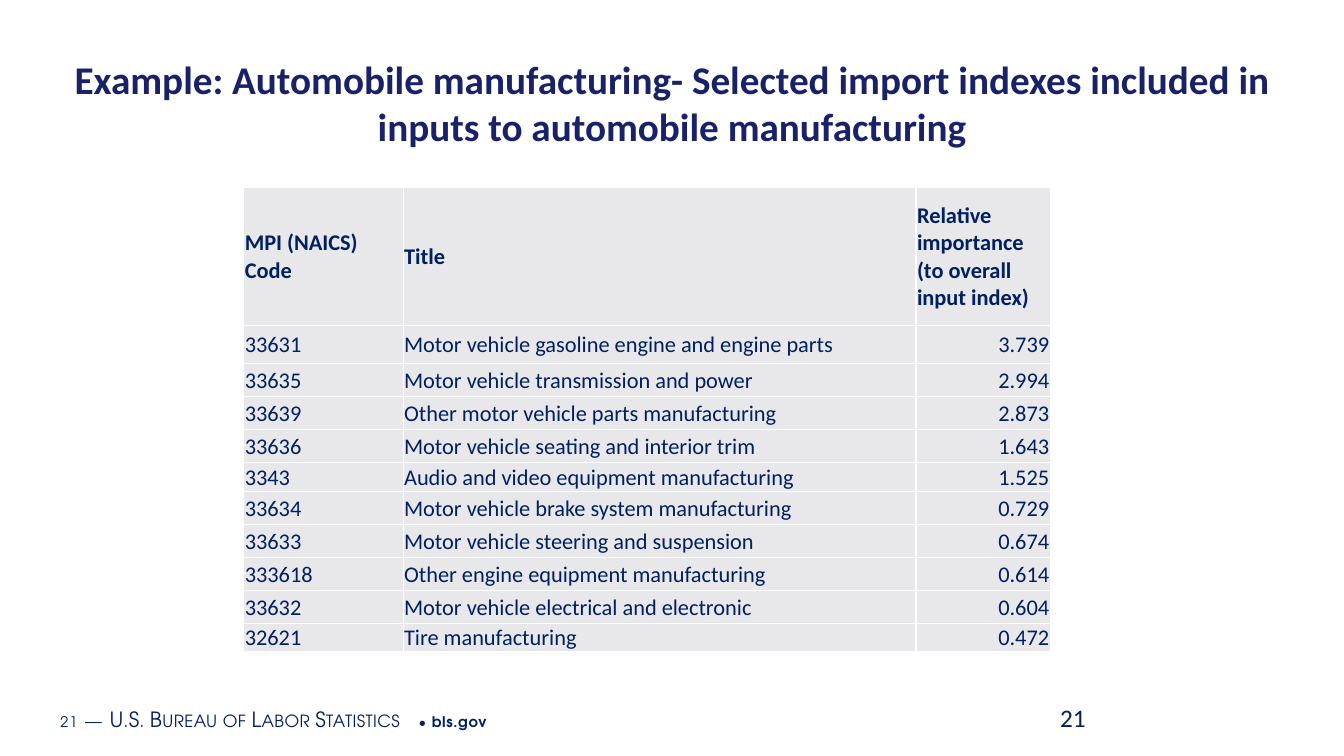
import pptx
import pptx.dml.color
import pptx.enum.text
import pptx.oxml
import pptx.oxml.ns
import pptx.util

Pt = pptx.util.Pt
RGBColor = pptx.dml.color.RGBColor
ALIGN = pptx.enum.text.PP_ALIGN
ANCHOR = pptx.enum.text.MSO_ANCHOR

NAVY = RGBColor(0x00, 0x20, 0x60)
TITLE_BLUE = RGBColor(0x19, 0x21, 0x68)
CELL_GRAY = RGBColor(0xE8, 0xE8, 0xEB)
RULE_WHITE = RGBColor(0xFF, 0xFF, 0xFF)

BODY_FONT = "Calibri"
FOOTER_FONT = "TeX Gyre Adventor"

PAGE = "21"
TITLE = ("Example: Automobile manufacturing- Selected import indexes "
         "included in inputs to automobile manufacturing")
HEADINGS = ("MPI (NAICS) Code", "Title",
            "Relative importance (to overall input index)")
INDEXES = [
    ("33631", "Motor vehicle gasoline engine and engine parts", "3.739"),
    ("33635", "Motor vehicle transmission and power", "2.994"),
    ("33639", "Other motor vehicle parts manufacturing", "2.873"),
    ("33636", "Motor vehicle seating and interior trim", "1.643"),
    ("3343", "Audio and video equipment manufacturing", "1.525"),
    ("33634", "Motor vehicle brake system manufacturing", "0.729"),
    ("33633", "Motor vehicle steering and suspension", "0.674"),
    ("333618", "Other engine equipment manufacturing", "0.614"),
    ("33632", "Motor vehicle electrical and electronic", "0.604"),
    ("32621", "Tire manufacturing", "0.472"),
]
COLUMN_WIDTHS = (113.8, 366.4, 95.8)
HEADER_HEIGHT, FIRST_HEIGHT, ROW_HEIGHT = 98.4, 27.4, 23.6
SHORT_ROWS = {"3343": 20.6, "32621": 20.2}

# Footer pieces: text, size, letter spacing, small caps, bold
FOOTER = [
    (PAGE, 10.5, 0.5, False, False),
    (" ", 16, 0.5, False, False),
    ("—", 15, 0.3, True, False),
    (" ", 16, 0.5, False, False),
    ("U.S. Bureau of Labor Statistics", 15, 0.3, True, False),
    (" • ", 10.5, 0.5, False, False),
    ("bls.gov", 10.5, 0.5, False, True),
]


def style(font, name, size, color, bold=False):
    font.name = name
    font.size = Pt(size)
    font.bold = bold
    font.color.rgb = color


def add_text(slide, box, text, size, color, bold=False, align=ALIGN.LEFT):
    frame = slide.shapes.add_textbox(*map(Pt, box)).text_frame
    frame.word_wrap = True
    frame.text = text
    paragraph = frame.paragraphs[0]
    paragraph.alignment = align
    style(paragraph.runs[0].font, BODY_FONT, size, color, bold)


def add_borders(cell):
    properties = cell._tc.get_or_add_tcPr()
    for position, side in enumerate(("lnL", "lnR", "lnT", "lnB")):
        border = pptx.oxml.parse_xml(
            f'<a:{side} {pptx.oxml.ns.nsdecls("a")} w="{Pt(1)}"><a:solidFill>'
            f'<a:srgbClr val="{RULE_WHITE}"/></a:solidFill></a:{side}>')
        properties.insert(position, border)


def fill_cell(cell, text, bold, align):
    cell.margin_left = cell.margin_right = cell.margin_top = Pt(0.7)
    cell.margin_bottom = Pt(0)
    cell.vertical_anchor = ANCHOR.MIDDLE
    cell.fill.solid()
    cell.fill.fore_color.rgb = CELL_GRAY
    add_borders(cell)
    cell.text_frame.text = text
    paragraph = cell.text_frame.paragraphs[0]
    paragraph.alignment = align
    style(paragraph.runs[0].font, BODY_FONT, 16, NAVY, bold)


def add_index_table(slide, box):
    records = [HEADINGS] + INDEXES
    table = slide.shapes.add_table(
        len(records), len(HEADINGS), *map(Pt, box)).table
    table.horz_banding = False
    for column, width in zip(table.columns, COLUMN_WIDTHS):
        column.width = Pt(width)
    for number, record in enumerate(records):
        is_header = number == 0
        usual_height = {0: HEADER_HEIGHT, 1: FIRST_HEIGHT}.get(number, ROW_HEIGHT)
        table.rows[number].height = Pt(SHORT_ROWS.get(record[0], usual_height))
        for place, text in enumerate(record):
            is_value = place == 2 and not is_header
            fill_cell(table.cell(number, place), text, is_header,
                      ALIGN.RIGHT if is_value else ALIGN.LEFT)


def add_footer(slide, box):
    frame = slide.shapes.add_textbox(*map(Pt, box)).text_frame
    frame.word_wrap = True
    frame.vertical_anchor = ANCHOR.MIDDLE
    frame.margin_left = frame.margin_right = Pt(5)
    frame.margin_top = frame.margin_bottom = Pt(2.9)
    for text, size, spacing, small_caps, bold in FOOTER:
        run = frame.paragraphs[0].add_run()
        run.text = text
        style(run.font, FOOTER_FONT, size, NAVY, bold)
        properties = run._r.get_or_add_rPr()
        properties.set("spc", str(round(spacing * 100)))
        if small_caps:
            properties.set("cap", "small")


def main():
    deck = pptx.Presentation()
    deck.slide_width, deck.slide_height = Pt(960), Pt(540)
    slide = deck.slides.add_slide(deck.slide_layouts[6])

    # Agency footer
    add_footer(slide, (38.2, 499, 610, 28.8))
    # Title
    add_text(slide, (38.9, 36, 882, 63.4), TITLE, 28, TITLE_BLUE, True, ALIGN.CENTER)
    # Import indexes
    add_index_table(slide, (174.2, 133.9, 576, 329.8))
    # Page number
    add_text(slide, (750.2, 498.2, 54, 28.8), PAGE, 18, NAVY)

    deck.save("out.pptx")


if __name__ == "__main__":
    main()
